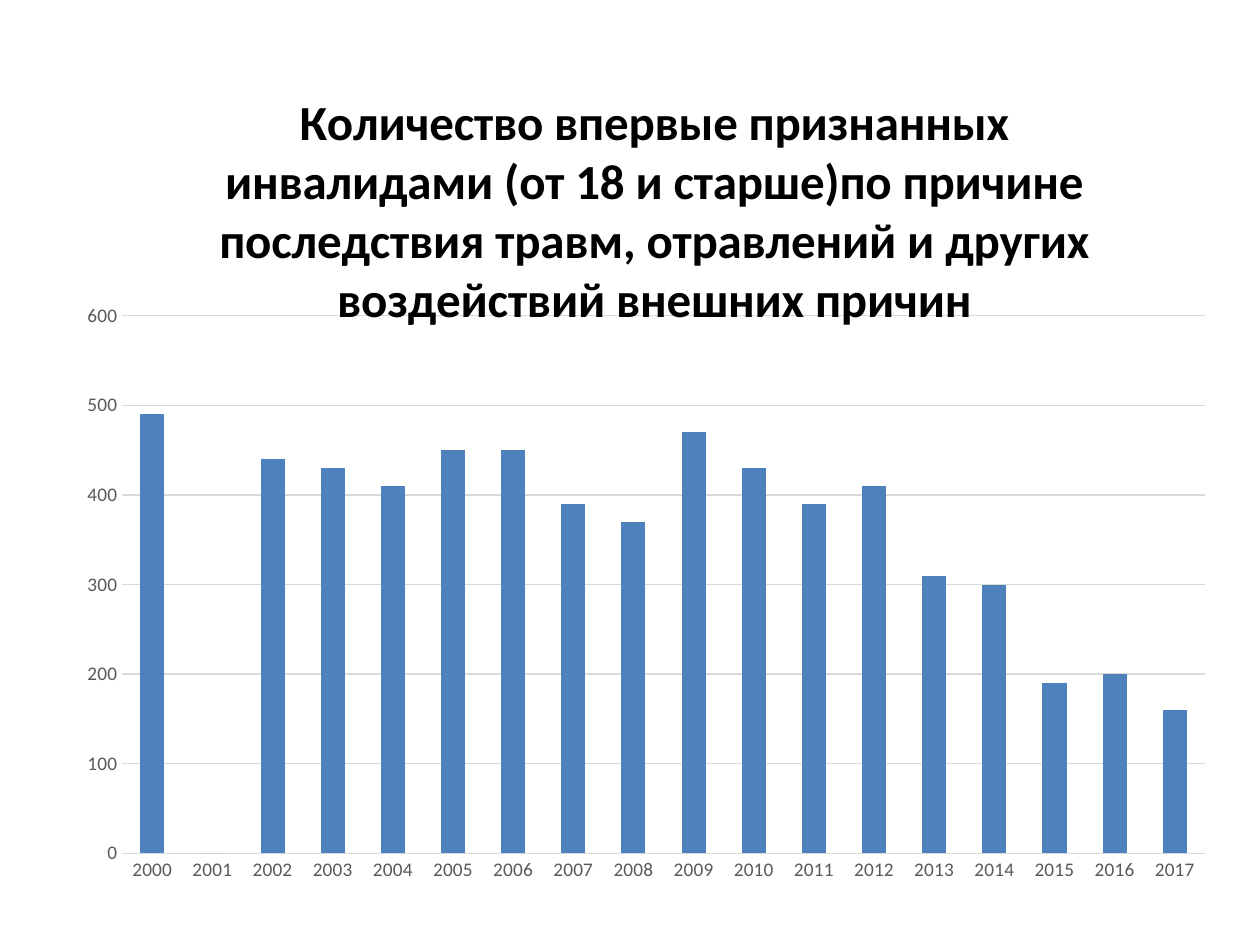
import lxml.etree
import pptx
import pptx.chart.data
import pptx.dml.color
import pptx.enum.chart
import pptx.oxml.ns
import pptx.util

RGBColor = pptx.dml.color.RGBColor
BLACK = RGBColor(0x00, 0x00, 0x00)
GREY = RGBColor(0x59, 0x59, 0x59)
GRID_GREY = RGBColor(0xD9, 0xD9, 0xD9)
BAR_BLUE = RGBColor(0x4F, 0x81, 0xBD)

HEADING = ("Количество впервые признанных инвалидами (от 18 и старше)по причине "
           "последствия травм, отравлений и других воздействий внешних причин")
FIRST_YEAR = 2000
DISABLED_PER_YEAR = [490, 0, 440, 430, 410, 450, 450, 390, 370,
                     470, 430, 390, 410, 310, 300, 190, 200, 160]

SLIDE_WIDTH, SLIDE_HEIGHT = 10, 7.5
CHART_BOX = (0.051, 0.048, 0.921, 0.903)  # shares of the slide
HEADING_PLACE = {"x": 0.126, "y": 0.04}  # shares of the chart
PLOT_PLACE = {"x": 0.05, "y": 0.317, "w": 0.933, "h": 0.63}

CHART_FONT = {"name": "Calibri", "size": pptx.util.Pt(10)}
HEADING_FONT = {"name": "Calibri", "size": pptx.util.Pt(28), "bold": True}
AXIS_FONT = {"name": "Calibri", "size": pptx.util.Pt(11), "bold": False}
AXIS_FORMAT = {
    "major_tick_mark": pptx.enum.chart.XL_TICK_MARK.NONE,
    "minor_tick_mark": pptx.enum.chart.XL_TICK_MARK.NONE,
}
SCALE_FORMAT = {"minimum_scale": 0, "maximum_scale": 600, "major_unit": 100,
                "has_major_gridlines": True}


def apply(target, values):
    for name, value in values.items():
        setattr(target, name, value)


def style_font(font, values, color):
    apply(font, values)
    font.color.rgb = color


def place(element, shares, inner=False):
    """Give a chart title or plot area a manual layout in shares of the chart."""
    qn = pptx.oxml.ns.qn
    for old in element.findall(qn("c:layout")):
        element.remove(old)
    layout = lxml.etree.Element(qn("c:layout"))
    manual = lxml.etree.SubElement(layout, qn("c:manualLayout"))
    settings = {"layoutTarget": "inner"} if inner else {}
    settings.update({"xMode": "edge", "yMode": "edge"})
    settings.update(shares)
    for tag, value in settings.items():
        lxml.etree.SubElement(manual, qn("c:" + tag)).set("val", str(value))
    text = element.find(qn("c:tx"))
    if text is None:
        element.insert(0, layout)
    else:
        text.addnext(layout)


def add_disability_chart(slide):
    data = pptx.chart.data.CategoryChartData()
    data.categories = [str(FIRST_YEAR + i) for i in range(len(DISABLED_PER_YEAR))]
    data.add_series(HEADING, DISABLED_PER_YEAR)
    left, top, width, height = CHART_BOX
    chart = slide.shapes.add_chart(
        pptx.enum.chart.XL_CHART_TYPE.COLUMN_STACKED,
        pptx.util.Inches(left * SLIDE_WIDTH), pptx.util.Inches(top * SLIDE_HEIGHT),
        pptx.util.Inches(width * SLIDE_WIDTH), pptx.util.Inches(height * SLIDE_HEIGHT),
        data).chart
    chart.has_legend = False
    style_font(chart.font, CHART_FONT, BLACK)

    chart.has_title = True
    heading = chart.chart_title
    heading.text_frame.text = HEADING
    style_font(heading.text_frame.paragraphs[0].runs[0].font, HEADING_FONT, BLACK)
    heading.include_in_layout = False
    title_element = heading.format.line and chart.element.chart.find(
        pptx.oxml.ns.qn("c:title"))
    heading.format.line.fill.background()
    place(title_element, HEADING_PLACE)
    place(chart.element.chart.plotArea, PLOT_PLACE, inner=True)

    for axis in (chart.category_axis, chart.value_axis):
        apply(axis, AXIS_FORMAT)
        style_font(axis.tick_labels.font, AXIS_FONT, GREY)
        axis.format.line.fill.background()
    apply(chart.value_axis, SCALE_FORMAT)
    gridline = chart.value_axis.major_gridlines.format.line
    gridline.color.rgb = GRID_GREY
    gridline.width = pptx.util.Pt(0.75)

    columns = chart.plots[0]
    apply(columns, {"gap_width": 150, "overlap": 100, "vary_by_categories": False})
    bars = columns.series[0].format
    bars.fill.solid()
    bars.fill.fore_color.rgb = BAR_BLUE


def main():
    presentation = pptx.Presentation()
    presentation.slide_width = pptx.util.Inches(SLIDE_WIDTH)
    presentation.slide_height = pptx.util.Inches(SLIDE_HEIGHT)
    blank_layout = presentation.slide_layouts[6]
    add_disability_chart(presentation.slides.add_slide(blank_layout))
    presentation.save("out.pptx")


if __name__ == "__main__":
    main()
